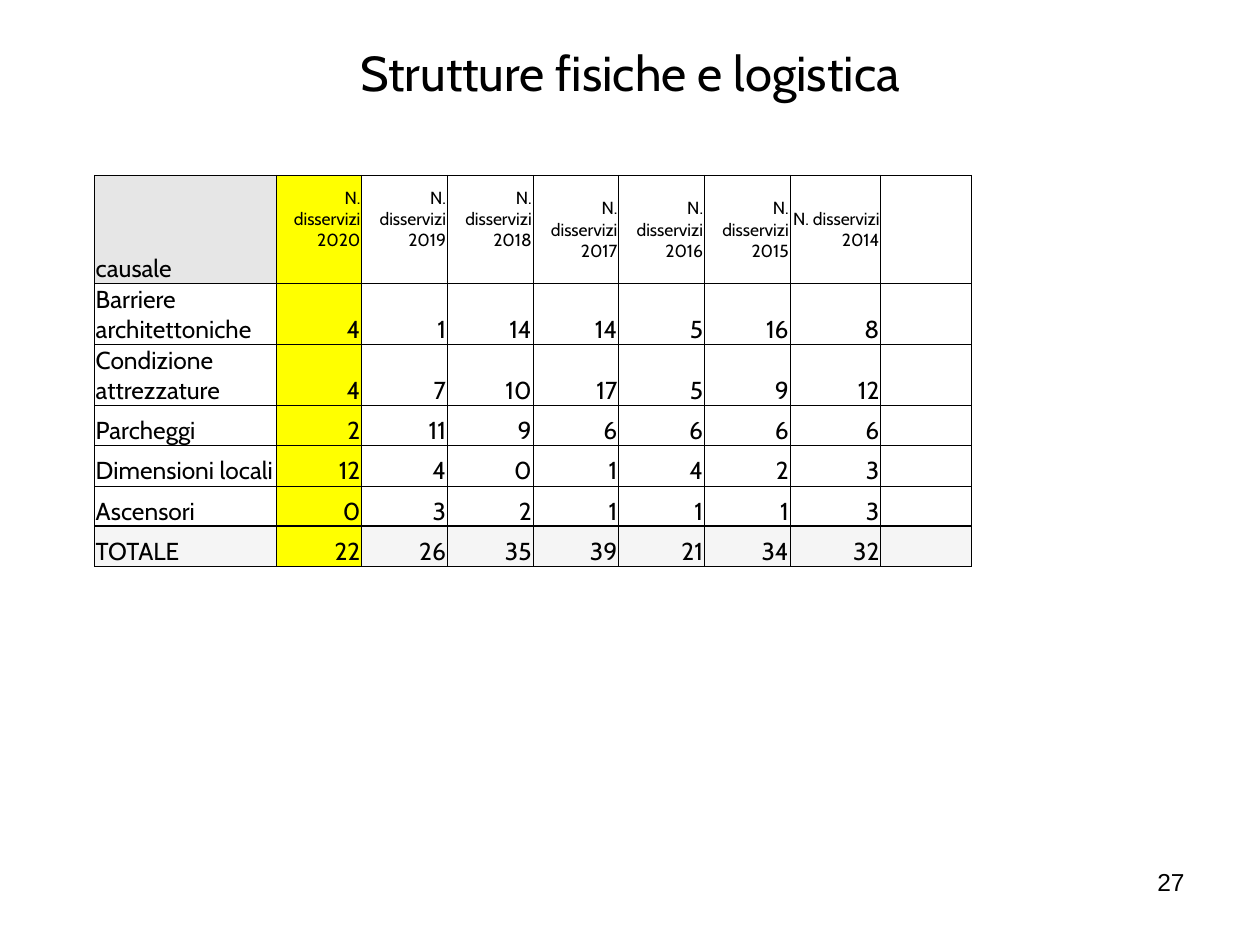
from pptx import Presentation
from pptx.dml.color import RGBColor
from pptx.enum.text import MSO_ANCHOR, PP_ALIGN
from pptx.oxml.ns import qn
from pptx.util import Inches, Pt
from lxml.etree import SubElement

COLOURS = {"black": "000000", "white": "FFFFFF", "current": "FFFF00",
           "corner": "E6E6E6", "total": "F5F5F5"}
TITLE = "Strutture fisiche e logistica"
PAGE_NUMBER = "27"
YEARS = range(2020, 2013, -1)
RAISED_YEARS = (2020, 2019, 2018)
CAUSES = [
    ("Barriere architettoniche", 4, 1, 14, 14, 5, 16, 8),
    ("Condizione attrezzature", 4, 7, 10, 17, 5, 9, 12),
    ("Parcheggi", 2, 11, 9, 6, 6, 6, 6),
    ("Dimensioni locali", 12, 4, 0, 1, 4, 2, 3),
    ("Ascensori", 0, 3, 2, 1, 1, 1, 3),
    ("TOTALE", 22, 26, 35, 39, 21, 34, 32),
]
ROWS = [("causale", *(f"N. disservizi {year}" for year in YEARS))] + CAUSES
COLUMN_WIDTHS = [1.44] + [0.68] * 6 + [0.72] * 2  # the last column is empty
ROW_HEIGHTS = [0.86, 0.48, 0.48] + [0.32] * 4
TOTAL_ROW = len(ROWS) - 1


def write(frame, text, size=14, font="Cabin", align=PP_ALIGN.LEFT,
          anchor=MSO_ANCHOR.TOP):
    frame.word_wrap = True
    frame.vertical_anchor = anchor
    para = frame.paragraphs[0]
    para.alignment = align
    span = para.add_run()
    span.text = text
    span.font.size = Pt(size)
    span.font.name = font
    span.font.color.rgb = RGBColor.from_string(COLOURS["black"])


def add_borders(cell, **widths):
    """Draw the cell's sides, given as L, R, T and B widths in points."""
    properties = cell._tc.get_or_add_tcPr()
    for side, width in widths.items():
        line = SubElement(properties, qn(f"a:ln{side}"), w=str(Pt(width)))
        fill = SubElement(line, qn("a:solidFill"))
        SubElement(fill, qn("a:srgbClr"), val=COLOURS["black"])


def fill_name(row, column):
    if column == 1:
        return "current"
    if row == TOTAL_ROW:
        return "total"
    return "corner" if row == column == 0 else "white"


def format_cell(cell, row, column):
    add_borders(cell, L=0.5, R=0.5,
                T=1 if row == TOTAL_ROW else 0.5,
                B=1 if row >= TOTAL_ROW - 1 else 0.5)
    cell.fill.solid()
    cell.fill.fore_color.rgb = RGBColor.from_string(COLOURS[fill_name(row, column)])
    cell.margin_left = cell.margin_right = cell.margin_top = Inches(0.01)
    cell.margin_bottom = 0
    if column >= len(ROWS[row]):
        return
    year_heading = row == 0 and column > 0
    write(cell.text_frame, str(ROWS[row][column]),
          size=10 if year_heading else 14,
          align=PP_ALIGN.RIGHT if column else PP_ALIGN.LEFT)
    cell.vertical_anchor = MSO_ANCHOR.MIDDLE if year_heading else MSO_ANCHOR.BOTTOM
    if year_heading and YEARS[column - 1] in RAISED_YEARS:
        cell.margin_bottom = Inches(0.17)


def add_complaints_table(page):
    frame = page.shapes.add_table(
        len(ROWS), len(COLUMN_WIDTHS), Inches(0.75), Inches(1.39),
        Inches(sum(COLUMN_WIDTHS)), Inches(sum(ROW_HEIGHTS)))
    table = frame.table
    for column, width in zip(table.columns, COLUMN_WIDTHS):
        column.width = Inches(width)
    for row, height in zip(table.rows, ROW_HEIGHTS):
        row.height = Inches(height)
    for row in range(len(ROWS)):
        for column in range(len(COLUMN_WIDTHS)):
            format_cell(table.cell(row, column), row, column)


def main():
    deck = Presentation()
    deck.slide_width, deck.slide_height = Inches(10), Inches(7.5)
    page = deck.slides.add_slide(deck.slide_layouts[5])

    title = page.shapes.title
    title.left, title.top = Inches(0.5), Inches(0.3)
    title.width, title.height = Inches(9), Inches(1.25)
    title.text_frame.margin_top = Inches(0.04)
    write(title.text_frame, TITLE, size=28, align=PP_ALIGN.CENTER)

    add_complaints_table(page)

    number = page.shapes.add_textbox(Inches(7.17), Inches(6.83),
                                     Inches(2.33), Inches(0.52))
    write(number.text_frame, PAGE_NUMBER, font="Arial", align=PP_ALIGN.RIGHT)

    deck.save("out.pptx")


if __name__ == "__main__":
    main()
